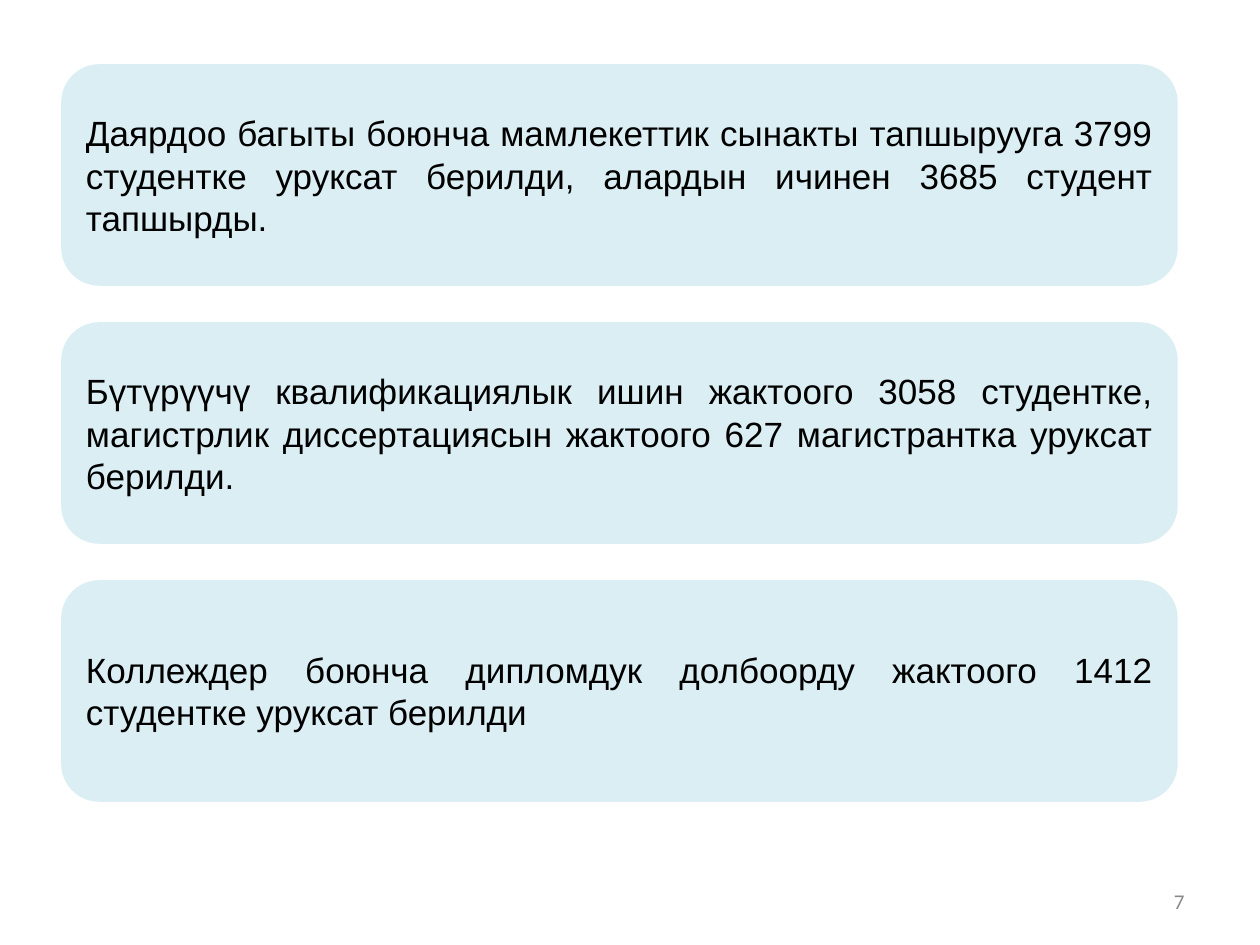
from pptx import Presentation
from pptx.dml.color import RGBColor
from pptx.enum.shapes import MSO_SHAPE as Shape
from pptx.enum.text import MSO_ANCHOR as Anchor, PP_ALIGN as Align
from pptx.util import Pt

STATEMENTS = [
    "Даярдоо багыты боюнча мамлекеттик сынакты тапшырууга 3799 студентке "
    "уруксат берилди, алардын ичинен 3685 студент тапшырды.",
    "Бүтүрүүчү квалификациялык ишин жактоого 3058 студентке, магистрлик "
    "диссертациясын жактоого 627 магистрантка уруксат берилди.",
    "Коллеждер боюнча дипломдук долбоорду жактоого 1412 студентке уруксат берилди",
]
PAGE_NUMBER = "7"
COLORS = {"panel": "DAEEF3", "text": "000000", "number": "888888"}

PX = 914400 // 126
SLIDE_W, SLIDE_H = 1260, 945
PANEL_LEFT, PANEL_TOP, PANEL_W, PANEL_H = 63, 66, 1113, 218
PANEL_GAP = 40
NUMBER_BOX = (903, 876, 294, 50)


def color(name):
    return RGBColor.from_string(COLORS[name])


def emu(*lengths):
    return [length * PX for length in lengths]


def write(shape, text, font_name, size, color_name, align):
    frame = shape.text_frame
    frame.word_wrap = True
    frame.vertical_anchor = Anchor.MIDDLE
    paragraph = frame.paragraphs[0]
    paragraph.text = text
    paragraph.alignment = align
    paragraph.font.name = font_name
    paragraph.font.size = Pt(size)
    paragraph.font.color.rgb = color(color_name)


def add_panel(slide, top, text):
    panel = slide.shapes.add_shape(
        Shape.ROUNDED_RECTANGLE, *emu(PANEL_LEFT, top, PANEL_W, PANEL_H))
    panel.shadow.inherit = False
    panel.fill.solid()
    panel.fill.fore_color.rgb = color("panel")
    panel.line.color.rgb = color("panel")
    panel.line.width = Pt(2)
    write(panel, text, "Arial", 20, "text", Align.JUSTIFY)


def main():
    deck = Presentation()
    deck.slide_width, deck.slide_height = emu(SLIDE_W, SLIDE_H)
    slide = deck.slides.add_slide(deck.slide_layouts[6])

    for row, statement in enumerate(STATEMENTS):
        add_panel(slide, PANEL_TOP + row * (PANEL_H + PANEL_GAP), statement)

    number = slide.shapes.add_textbox(*emu(*NUMBER_BOX))
    write(number, PAGE_NUMBER, "Calibri", 12, "number", Align.RIGHT)

    deck.save("out.pptx")


if __name__ == "__main__":
    main()
